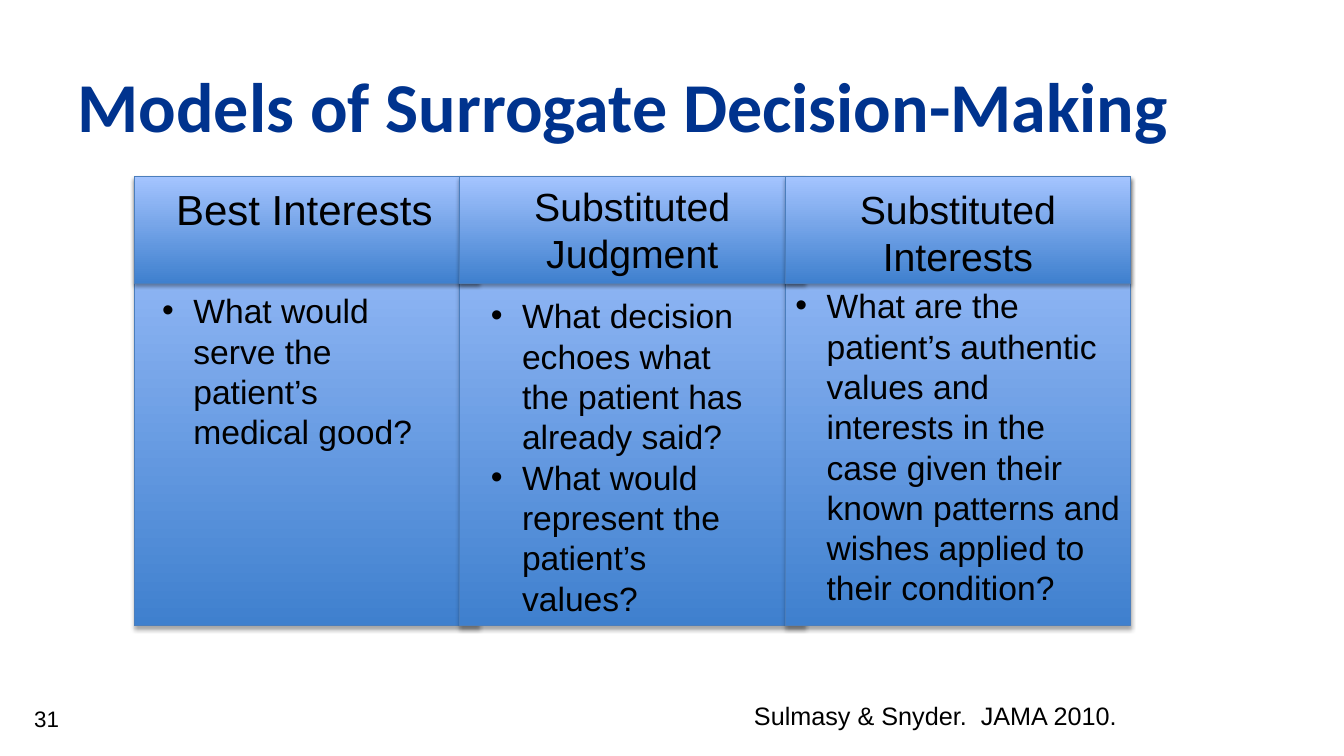
from lxml.etree import SubElement
from pptx import Presentation
from pptx.dml.color import RGBColor
from pptx.enum.shapes import MSO_SHAPE
from pptx.enum.text import MSO_ANCHOR, MSO_AUTO_SIZE, PP_ALIGN
from pptx.oxml.ns import qn
from pptx.util import Inches, Pt

COLUMN_LEFT = 1.33
COLUMN_TOP = 1.75
COLUMN_STEP = 3.23
COLUMN_WIDTH = 3.42
COLUMN_HEIGHT = 4.46
HEADER_HEIGHT = 1.06

MODELS = [
    {
        "heading": "Best Interests",
        "heading_size": 30,
        "heading_box": (-0.02, 0.02, 3.42, 0.61),
        "questions": ["What would serve the patient’s medical good?"],
        "question_box": (0.18, 1.08, 2.9, 1.72),
    },
    {
        "heading": "Substituted Judgment",
        "heading_size": 28,
        "heading_box": (0, 0.01, 3.42, 1.04),
        "questions": [
            "What decision echoes what the patient has already said?",
            "What would represent the patient’s values?",
        ],
        "question_box": (0.21, 1.13, 2.9, 3.33),
    },
    {
        "heading": "Substituted Interests",
        "heading_size": 28,
        "heading_box": (0, 0.04, 3.42, 1.04),
        "questions": [
            "What are the patient’s authentic values and interests in the case "
            "given their known patterns and wishes applied to their condition?"
        ],
        "question_box": (0, 1.03, 3.42, 3.33),
    },
]


def color(value):
    """Return the colour for a hex string."""
    return RGBColor.from_string(value)


def inches(box):
    """Convert a box given in inches to lengths."""
    return [Inches(value) for value in box]


def shift(box, left, top):
    """Move a relative box to its place on the slide."""
    return (left + box[0], top + box[1], box[2], box[3])


def add_run(paragraph, text, size, name="Arial", ink="000000", bold=False):
    """Add one formatted run to a paragraph."""
    run = paragraph.add_run()
    run.text = text
    run.font.size = Pt(size)
    run.font.name = name
    run.font.bold = bold
    run.font.color.rgb = color(ink)


def add_bullet(paragraph):
    """Give a paragraph a hanging round bullet."""
    properties = paragraph._p.get_or_add_pPr()
    properties.set("marL", str(Inches(0.31)))
    properties.set("indent", str(-Inches(0.31)))
    SubElement(properties, qn("a:buFont"), typeface="Arial")
    SubElement(properties, qn("a:buChar"), char="•")


def add_text(slide, box, lines, size, alignment=PP_ALIGN.LEFT, bullets=False):
    """Add a wrapping text box with one paragraph per line."""
    frame = slide.shapes.add_textbox(*inches(box)).text_frame
    frame.word_wrap = True
    for index, line in enumerate(lines):
        paragraph = frame.add_paragraph() if index else frame.paragraphs[0]
        paragraph.alignment = alignment
        if bullets:
            add_bullet(paragraph)
        add_run(paragraph, line, size)


def add_shadow(shape):
    """Cast a soft shadow below a shape."""
    shape.shadow.inherit = False
    effects = shape._element.spPr.find(qn("a:effectLst"))
    shadow = SubElement(
        effects, qn("a:outerShdw"), blurRad=str(Pt(3.1)), dist=str(Pt(1.8)),
        dir="5400000", rotWithShape="0",
    )
    ink = SubElement(shadow, qn("a:srgbClr"), val="000000")
    SubElement(ink, qn("a:alpha"), val="35000")


def add_panel(slide, box):
    """Add a blue gradient rectangle."""
    panel = slide.shapes.add_shape(MSO_SHAPE.RECTANGLE, *inches(box))
    panel.fill.gradient()
    panel.fill.gradient_angle = 90
    for stop, position, tone in zip(panel.fill.gradient_stops, (0, 1), ("3F80CE", "A4C4FF")):
        stop.position = position
        stop.color.rgb = color(tone)
    panel.line.color.rgb = color("4B7EBC")
    panel.line.width = Pt(0.75)
    add_shadow(panel)


def add_title(slide, box, text):
    """Fill and place the title placeholder."""
    title = slide.shapes.title
    title.left, title.top, title.width, title.height = inches(box)
    frame = title.text_frame
    frame.word_wrap = True
    frame.auto_size = MSO_AUTO_SIZE.NONE
    frame.vertical_anchor = MSO_ANCHOR.MIDDLE
    paragraph = frame.paragraphs[0]
    paragraph.alignment = PP_ALIGN.LEFT
    add_run(paragraph, text, 50, "Calibri", "00338E", True)


def add_models(slide, left, top):
    """Add the row of columns comparing the models."""
    lefts = [left + index * COLUMN_STEP for index in range(len(MODELS))]
    for height in (COLUMN_HEIGHT, HEADER_HEIGHT):
        for column_left in lefts:
            add_panel(slide, (column_left, top, COLUMN_WIDTH, height))
    for column_left, model in zip(lefts, MODELS):
        heading_box = shift(model["heading_box"], column_left, top)
        question_box = shift(model["question_box"], column_left, top)
        add_text(slide, heading_box, [model["heading"]], model["heading_size"], PP_ALIGN.CENTER)
        add_text(slide, question_box, model["questions"], 24, bullets=True)


def main():
    """Build and save the presentation."""
    presentation = Presentation()
    presentation.slide_width = Inches(13.33)
    presentation.slide_height = Inches(7.5)
    slide = presentation.slides.add_slide(presentation.slide_layouts[5])
    add_title(slide, (0.67, 0.32, 12, 1.43), "Models of Surrogate Decision-Making")
    add_models(slide, COLUMN_LEFT, COLUMN_TOP)
    add_text(slide, (0.24, 6.95, 1.12, 0.37), ["31"], 16)
    add_text(slide, (7.38, 6.9, 4.9, 0.4), ["Sulmasy & Snyder.  JAMA 2010."], 18)
    presentation.save("out.pptx")


if __name__ == "__main__":
    main()
